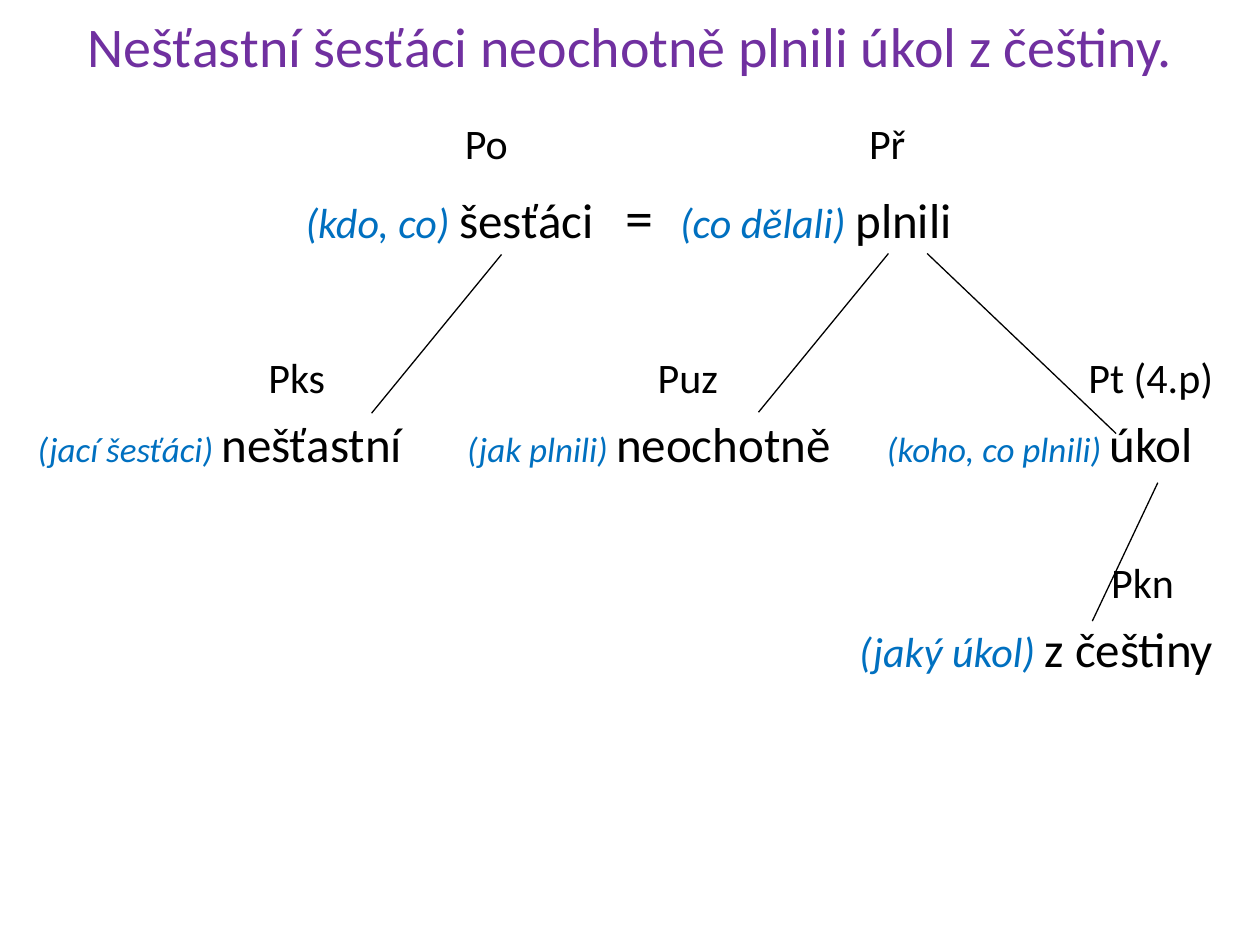
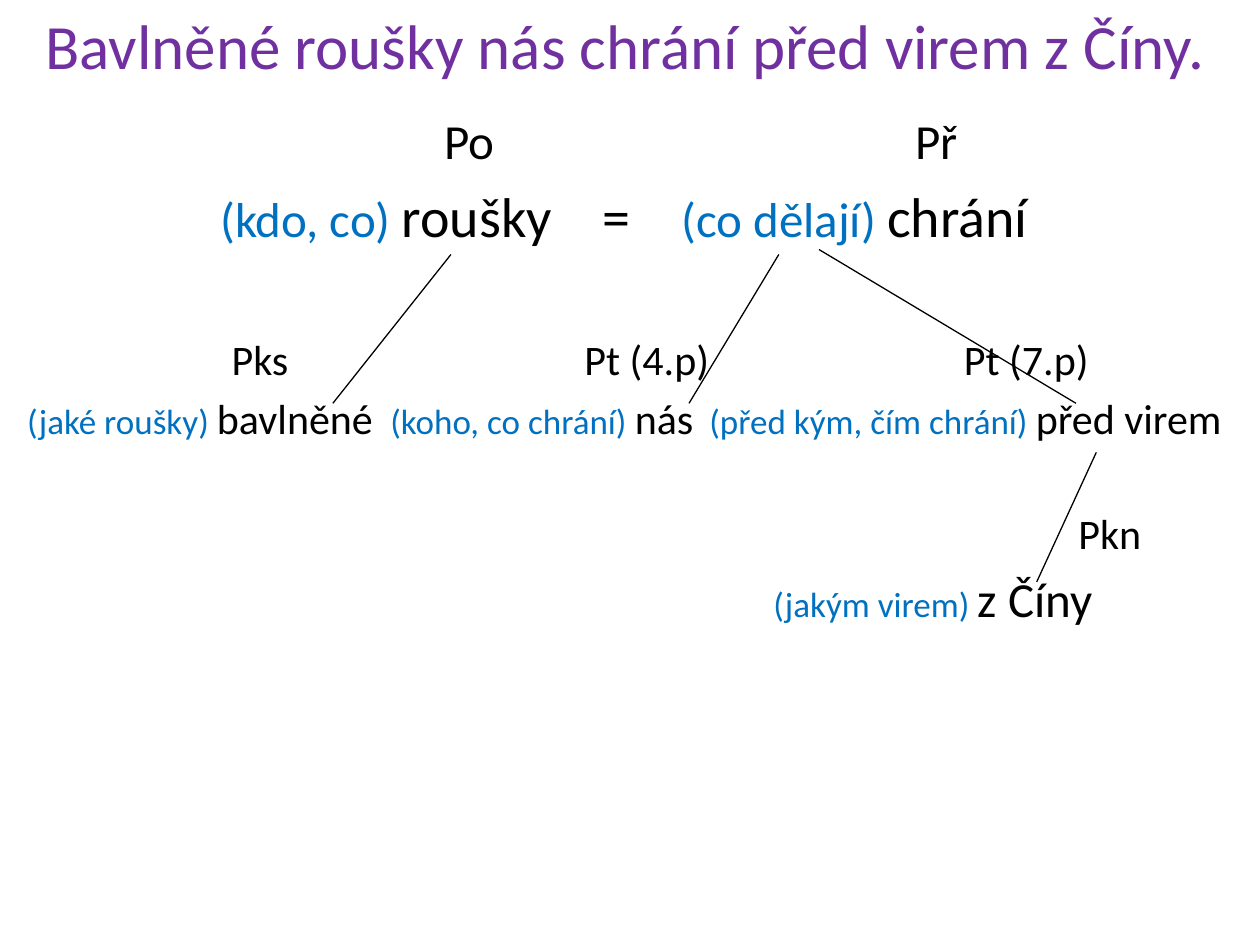
from lxml.etree import SubElement
from pptx import Presentation
from pptx.dml.color import RGBColor
from pptx.enum.shapes import MSO_CONNECTOR
from pptx.enum.text import MSO_ANCHOR, PP_ALIGN
from pptx.oxml.ns import qn
from pptx.util import Cm, Pt

FONT = "Calibri"
PURPLE, BLUE, BLACK = "7030A0", "0070C0", "000000"


def rgb(value):
    return RGBColor.from_string(value)


class Deck:
    def __init__(self):
        self.prs = Presentation()
        self.prs.slide_width, self.prs.slide_height = Cm(25.4), Cm(19.05)
        self.s = None

    def slide(self):
        self.s = self.prs.slides.add_slide(self.prs.slide_layouts[6])

    def box(self, left, top, width, height):
        tf = self.s.shapes.add_textbox(Cm(left), Cm(top), Cm(width), Cm(height)).text_frame
        tf.word_wrap = True
        return tf

    def run(self, p, text, size, color=BLACK, italic=False):
        r = p.add_run()
        r.text = text
        r.font.name, r.font.size, r.font.italic = FONT, Pt(size), italic
        r.font.color.rgb = rgb(color)

    def title(self, text, size, left, width):
        tf = self.box(left, -0.69, width, 3.18)
        tf.vertical_anchor = MSO_ANCHOR.MIDDLE
        p = tf.paragraphs[0]
        p.alignment = PP_ALIGN.CENTER
        self.run(p, text, size)
        p.runs[0].font.color.rgb = rgb(PURPLE)

    def tabs(self, p, stops):
        tab_list = SubElement(p._p.get_or_add_pPr(), qn("a:tabLst"))
        for stop in stops:
            SubElement(tab_list, qn("a:tab"), pos=str(int(Cm(stop))), algn="l")

    def body(self, rows, left, width, inset, italic):
        tf = self.box(left, 1.93, width, 16.61)
        tf.margin_top = Cm(inset)
        for i, (before, question_size, size, cells) in enumerate(rows):
            p = tf.paragraphs[0] if i == 0 else tf.add_paragraph()
            self.tabs(p, [x for x, *_ in cells if x])
            if before:
                p.space_before = Pt(before)
            for x, question, word in cells:
                lead = "\t" if x else ""
                if question:
                    self.run(p, f"{lead}{question} ", question_size, BLUE, italic)
                    lead = ""
                self.run(p, lead + word, 32 if word == "=" else size)

    def line(self, x1, y1, x2, y2):
        c = self.s.shapes.add_connector(MSO_CONNECTOR.STRAIGHT, Cm(x1), Cm(y1), Cm(x2), Cm(y2))
        c.line.color.rgb = rgb(BLACK)
        c.line.width = Pt(0.75)
        SubElement(c._element.spPr, qn("a:effectLst"))

    def sentence_tree(self, title, title_size, left, width, inset, italic, rows, branches):
        self.slide()
        self.title(title, title_size, left, width)
        self.body(rows, left, width, inset, italic)
        for branch in branches:
            self.line(*branch)


def main():
    deck = Deck()
    deck.sentence_tree(
        "Nešťastní šesťáci neochotně plnili úkol z češtiny.", 32, 0.51, 24.41, 0.43, True,
        [
            (0, 24, 24, [(8.61, "", "Po"), (16.76, "", "Př")]),
            (8.8, 24, 28, [(5.4, "(kdo, co)", "šesťáci"), (11.86, "", "="),
                           (12.95, "(co dělali)", "plnili")]),
            (58.2, 24, 24, [(4.65, "", "Pks"), (12.5, "", "Puz"), (21.18, "", "Pt (4.p)")]),
            (6.4, 20, 28, [(0, "(jací šesťáci)", "nešťastní"), (8.66, "(jak plnili)", "neochotně"),
                           (17.12, "(koho, co plnili)", "úkol")]),
            (47.9, 24, 24, [(21.64, "", "Pkn")]),
            (6.9, 24, 28, [(16.56, "(jaký úkol)", "z češtiny")]),
        ],
        [(10.11, 5.13, 7.49, 8.33), (17.91, 5.11, 15.29, 8.31),
         (18.69, 5.11, 22.5, 8.74), (23.34, 9.73, 22.02, 12.52)])
    deck.sentence_tree(
        "Bavlněné roušky nás chrání před virem z Číny.", 36, 0.3, 24.61, 0.29, False,
        [
            (0, 28, 28, [(8.41, "", "Po"), (17.91, "", "Př")]),
            (7.3, 28, 32, [(3.89, "(kdo, co)", "roušky"), (11.59, "", "="),
                           (13.19, "(co dělají)", "chrání")]),
            (48.4, 24, 24, [(4.12, "", "Pks"), (11.23, "", "Pt (4.p)"), (18.88, "", "Pt (7.p)")]),
            (4.7, 20, 24, [(0, "(jaké roušky)", "bavlněné"), (7.32, "(koho, co chrání)", "nás"),
                           (13.75, "(před kým, čím chrání)", "před virem")]),
            (37.3, 24, 24, [(21.19, "", "Pkn")]),
            (5.9, 20, 28, [(15.04, "(jakým virem)", "z Číny")]),
        ],
        [(9.09, 5.13, 6.71, 8.13), (15.7, 5.13, 13.89, 8.13),
         (16.51, 5.03, 21.69, 8.13), (22.1, 9.12, 20.9, 11.73)])
    deck.prs.save("out.pptx")


if __name__ == "__main__":
    main()
